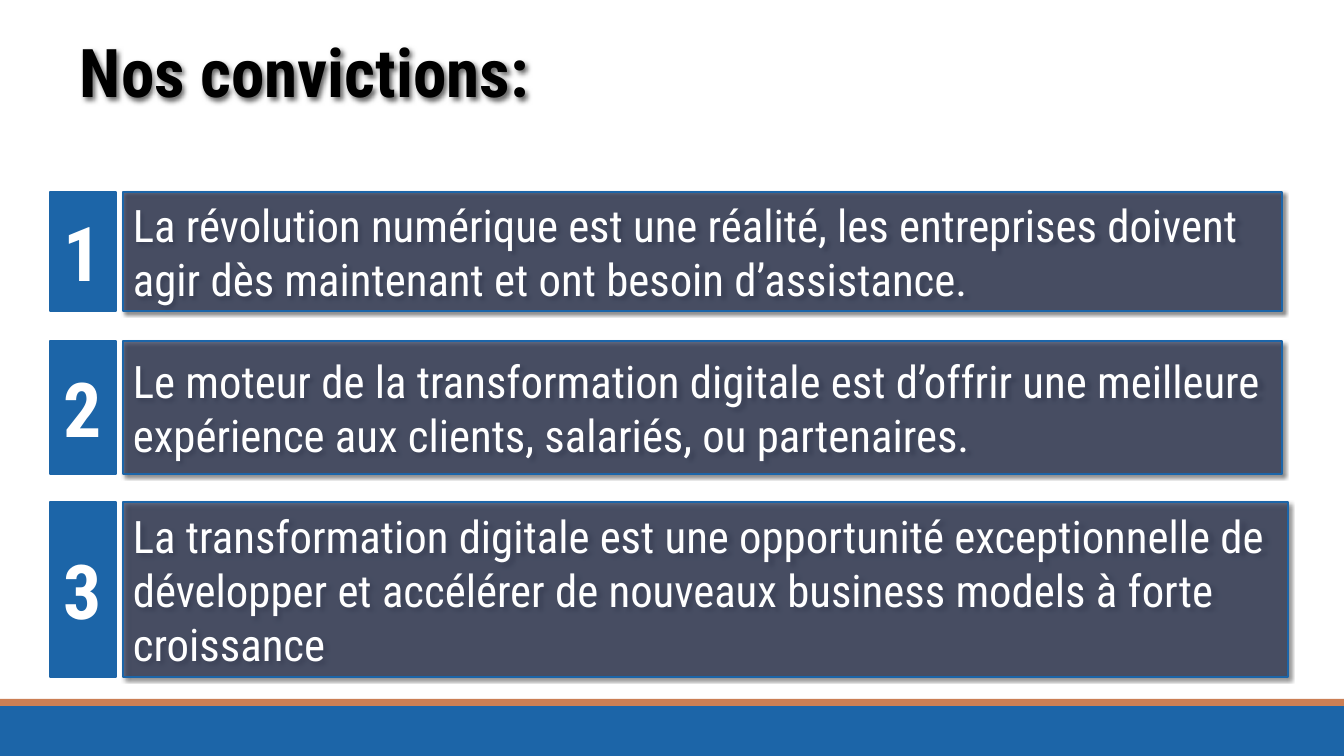
from lxml import etree
from pptx import Presentation, util as u
from pptx.dml.color import RGBColor
from pptx.enum import shapes, text
from pptx.oxml.ns import qn

TITLE = "Nos convictions:"
CONVICTIONS = [
    ("La révolution numérique est une réalité, les entreprises doivent agir dès "
     "maintenant et ont besoin d’assistance.", 192, 119, 1159),
    ("Le moteur de la transformation digitale est d’offrir une meilleure expérience "
     "aux clients, salariés, ou partenaires.", 341, 133, 1159),
    ("La transformation digitale est une opportunité exceptionnelle de développer et "
     "accélérer de nouveaux business models à forte croissance", 502, 175, 1165),
]

BLUE = RGBColor(0x1C, 0x65, 0xA8)
ORANGE = RGBColor(0xCB, 0x7F, 0x55)
NAVY = RGBColor(0x27, 0x30, 0x4E)
WHITE = RGBColor(0xFF, 0xFF, 0xFF)
BLACK = RGBColor(0, 0, 0)
FONT = "Roboto Condensed"

WIDTH, HEIGHT = 1344, 756
FOOTER_HEIGHT, STRIPE_HEIGHT = 50, 7
MARGIN = 50
NUMBER_WIDTH = 66
PANEL_LEFT = 123


def px(length):
    return u.Emu(round(length * 914400 / 100.8))


def add_box(slide, left, top, width, height, fill, line_width=None):
    shape = slide.shapes.add_shape(
        shapes.MSO_SHAPE.RECTANGLE, px(left), px(top), px(width), px(height))
    shape.shadow.inherit = False
    shape.fill.solid()
    shape.fill.fore_color.rgb = fill
    if line_width:
        shape.line.color.rgb = BLUE
        shape.line.width = u.Pt(line_width)
    else:
        shape.line.fill.background()
    return shape


def write(shape, content, size, color, bold=False, align=text.PP_ALIGN.LEFT,
          anchor=text.MSO_ANCHOR.MIDDLE):
    frame = shape.text_frame
    frame.word_wrap = True
    frame.vertical_anchor = anchor
    frame.text = content
    paragraph = frame.paragraphs[0]
    paragraph.alignment = align
    font = paragraph.runs[0].font
    font.name, font.size, font.bold = FONT, u.Pt(size), bold
    font.color.rgb = color
    return paragraph


def add_shadow(shape):
    shape.shadow.inherit = False
    effects = shape._element.spPr.find(qn("a:effectLst"))
    shadow = etree.SubElement(
        effects, qn("a:outerShdw"), blurRad=str(u.Pt(3)), dist=str(u.Pt(2)),
        dir=str(45 * 60000), algn="tl", rotWithShape="0")
    color = etree.SubElement(shadow, qn("a:srgbClr"), val=str(BLACK))
    etree.SubElement(color, qn("a:alpha"), val="60000")


def add_footer(slide):
    footer_top = HEIGHT - FOOTER_HEIGHT
    add_box(slide, 0, footer_top, WIDTH, FOOTER_HEIGHT, BLUE)
    add_box(slide, 0, footer_top - STRIPE_HEIGHT, WIDTH, STRIPE_HEIGHT, ORANGE)


def add_title(slide):
    title = slide.shapes.add_textbox(px(MARGIN), px(25), px(1232), px(92))
    paragraph = write(title, TITLE, 48, BLACK, bold=True, anchor=text.MSO_ANCHOR.TOP)
    paragraph._p.get_or_add_pPr().set("marL", str(px(20)))
    title.text_frame.auto_size = text.MSO_AUTO_SIZE.SHAPE_TO_FIT_TEXT
    add_shadow(title)


def add_conviction(slide, number, content, top, height, width):
    panel = add_box(slide, PANEL_LEFT, top, width, height, NAVY, 1)
    color = panel._element.spPr.find(qn("a:solidFill"))[0]
    etree.SubElement(color, qn("a:alpha"), val="70000")
    add_shadow(panel)
    write(panel, content, 32, WHITE)
    badge = add_box(slide, MARGIN, top, NUMBER_WIDTH, height, BLUE, 1.25)
    write(badge, str(number), 54, WHITE, bold=True, align=text.PP_ALIGN.CENTER)


def main():
    presentation = Presentation()
    presentation.slide_width, presentation.slide_height = px(WIDTH), px(HEIGHT)
    slide = presentation.slides.add_slide(presentation.slide_layouts[6])
    add_footer(slide)
    add_title(slide)
    for number, conviction in enumerate(CONVICTIONS, 1):
        add_conviction(slide, number, *conviction)
    presentation.save("out.pptx")


if __name__ == "__main__":
    main()
